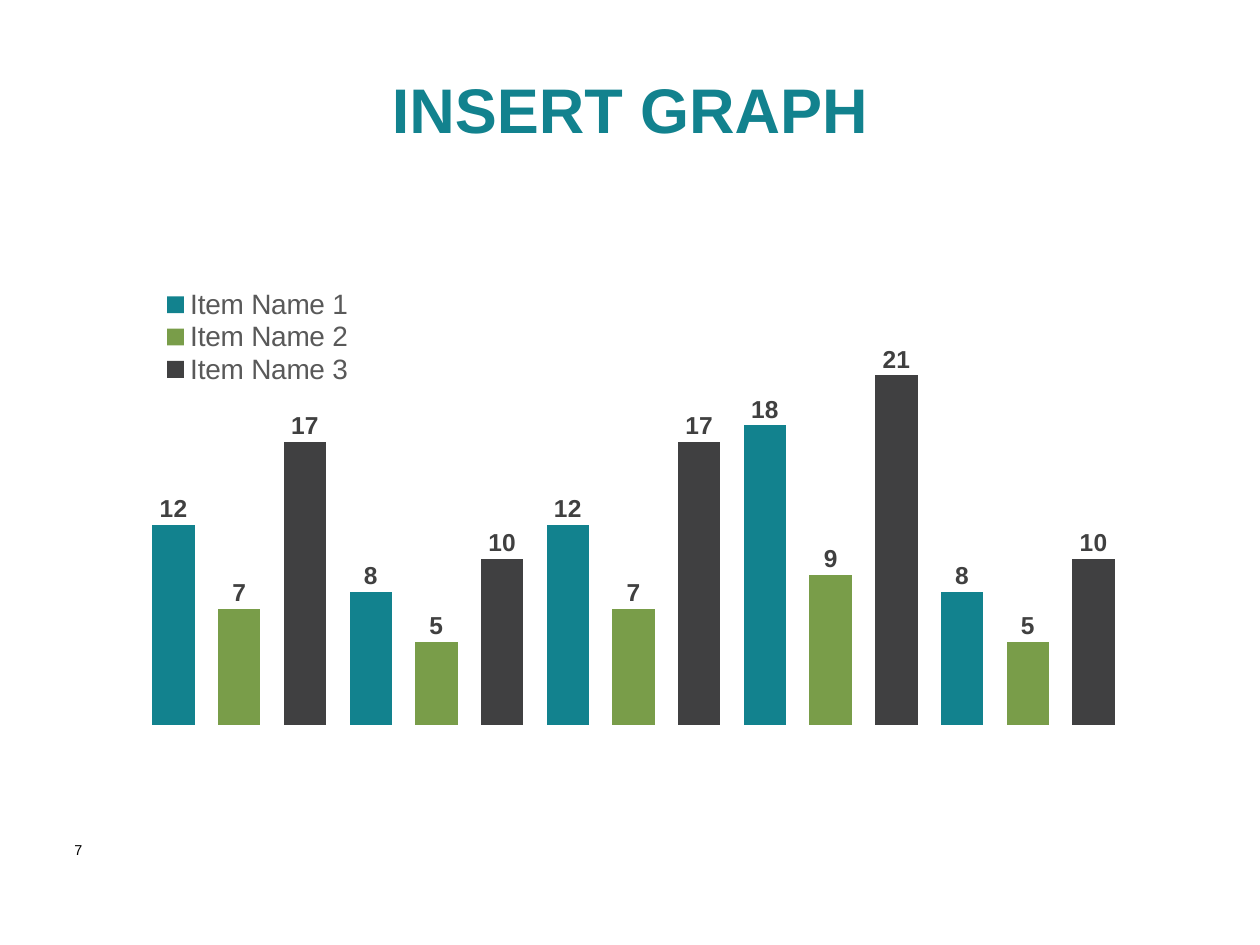
from lxml.etree import SubElement
from pptx import Presentation
from pptx.chart.data import CategoryChartData
from pptx.dml.color import RGBColor
from pptx.enum.chart import XL_CHART_TYPE, XL_LABEL_POSITION, XL_LEGEND_POSITION
from pptx.enum.text import MSO_ANCHOR, PP_ALIGN
from pptx.oxml import parse_xml
from pptx.oxml.ns import nsdecls, qn
from pptx.util import Pt

TITLE = "INSERT GRAPH"
PAGE_NUMBER = "7"
ITEMS = [("Item Name 1", "12828E"), ("Item Name 2", "799D49"), ("Item Name 3", "404041")]
VALUES = [12, 7, 17, 8, 5, 10, 12, 7, 17, 18, 9, 21, 8, 5, 10]

SLIDE_SIZE = (1260, 945)
TITLE_BOX = (234, 66, 792, 84)
CHART_BOX = (32, 253, 1157, 495)
PAGE_BOX = (62, 835, 54, 68)
PLOT_AREA = {"x": 0.094, "y": 0.113, "w": 0.852, "h": 0.841}
LEGEND_AREA = {"x": 0.11, "y": 0.07, "w": 0.17, "h": 0.2}
LABEL_SHIFT = {"x": 0, "y": -0.07}
EMU_PER_PX = 914400 / 126


def px(length):
    return round(length * EMU_PER_PX)


def color(value):
    return RGBColor.from_string(value)


def style(font, size, value, bold=False):
    font.name = "Arial"
    font.size = Pt(size)
    font.bold = bold
    font.color.rgb = color(value)


def layout_xml(area, target=None, edge=True):
    layout = parse_xml(f"<c:layout {nsdecls('c')}><c:manualLayout/></c:layout>")
    settings = [("layoutTarget", target)] if target else []
    if edge:
        settings += [("xMode", "edge"), ("yMode", "edge")]
    for tag, value in settings + list(area.items()):
        SubElement(layout[0], qn(f"c:{tag}")).set("val", str(value))
    return layout


def set_layout(parent, layout, after=None):
    for old in parent.findall(qn("c:layout")):
        parent.remove(old)
    if after is None:
        parent.insert(0, layout)
    else:
        parent.find(qn(after)).addnext(layout)


def add_title(slide):
    title = slide.shapes.title
    title.left, title.top, title.width, title.height = map(px, TITLE_BOX)
    frame = title.text_frame
    frame.vertical_anchor = MSO_ANCHOR.MIDDLE
    heading = frame.paragraphs[0]
    heading.alignment = PP_ALIGN.CENTER
    run = heading.add_run()
    run.text = TITLE
    style(run.font, 36, "12828E", True)


def add_page_number(slide):
    frame = slide.shapes.add_textbox(*map(px, PAGE_BOX)).text_frame
    frame.word_wrap = True
    run = frame.paragraphs[0].add_run()
    run.text = PAGE_NUMBER
    style(run.font, 8.2, "000000")


def add_graph(slide):
    data = CategoryChartData()
    data.categories = [str(number) for number in range(1, len(VALUES) + 1)]
    stack = list(reversed(list(enumerate(ITEMS))))
    for item, (name, _) in stack:
        data.add_series(name, [value if place % len(ITEMS) == item else None
                               for place, value in enumerate(VALUES)])
    chart = slide.shapes.add_chart(
        XL_CHART_TYPE.COLUMN_STACKED, *map(px, CHART_BOX), data).chart
    style(chart.font, 10, "000000")
    chart.has_title = False
    chart.category_axis.visible = False
    chart.value_axis.visible = False
    chart.value_axis.has_major_gridlines = False
    chart.value_axis.minimum_scale = 0
    chart.value_axis.maximum_scale = 25

    plot = chart.plots[0]
    plot.gap_width = 55
    plot.overlap = 100
    plot.vary_by_categories = False
    set_layout(chart.element.chart.plotArea, layout_xml(PLOT_AREA, "inner"))

    chart.has_legend = True
    legend = chart.legend
    legend.position = XL_LEGEND_POSITION.RIGHT
    legend.include_in_layout = False
    style(legend.font, 16, "595959")
    set_layout(legend.element if hasattr(legend, "element") else legend._element,
               layout_xml(LEGEND_AREA), "c:legendPos")

    for series, (item, (_, fill)) in zip(plot.series, stack):
        series.format.fill.solid()
        series.format.fill.fore_color.rgb = color(fill)
        for place in range(item, len(VALUES), len(ITEMS)):
            label = series.points[place].data_label
            style(label.font, 14, "404040", True)
            label.position = XL_LABEL_POSITION.INSIDE_END
        for label_xml in series._element.iter(qn("c:dLbl")):
            set_layout(label_xml, layout_xml(LABEL_SHIFT, edge=False), "c:idx")


def main():
    deck = Presentation()
    deck.slide_width, deck.slide_height = map(px, SLIDE_SIZE)
    slide = deck.slides.add_slide(deck.slide_layouts[5])
    add_page_number(slide)
    add_graph(slide)
    add_title(slide)
    deck.save("out.pptx")


if __name__ == "__main__":
    main()
